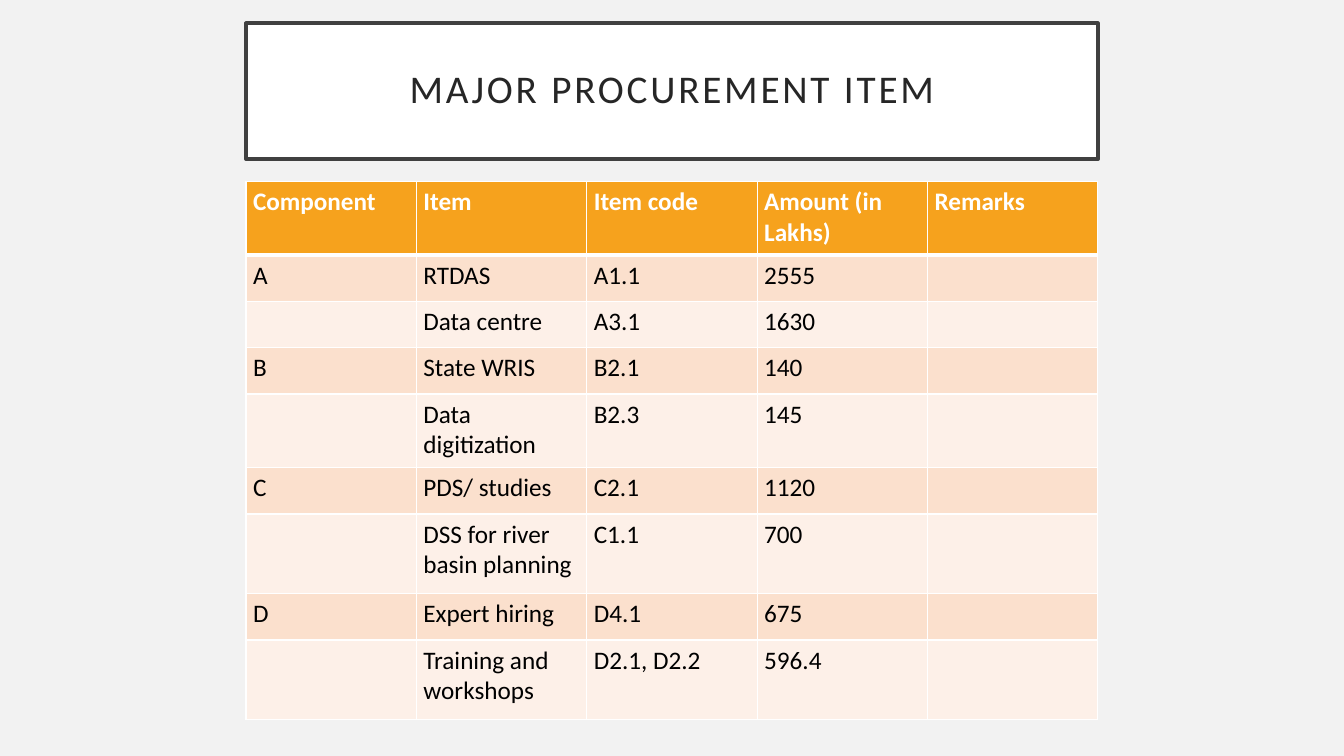
"""Build the slide that lists the major procurement items."""
from dataclasses import dataclass

from lxml import etree
from pptx import Presentation
from pptx.dml.color import RGBColor
from pptx.enum.shapes import MSO_SHAPE
from pptx.enum.text import MSO_ANCHOR, PP_ALIGN
from pptx.oxml.ns import qn
from pptx.slide import Slide
from pptx.table import _Cell
from pptx.text.text import _Paragraph
from pptx.util import Inches, Pt

RECTANGLE = MSO_SHAPE.RECTANGLE
MIDDLE = MSO_ANCHOR.MIDDLE
LEFT, CENTER = PP_ALIGN.LEFT, PP_ALIGN.CENTER

BACKGROUND = RGBColor(0xF2, 0xF2, 0xF2)
WHITE = RGBColor(0xFF, 0xFF, 0xFF)
BLACK = RGBColor(0x00, 0x00, 0x00)
FRAME = RGBColor(0x40, 0x40, 0x40)
HEADING = RGBColor(0x26, 0x26, 0x26)
ORANGE = RGBColor(0xF6, 0xA2, 0x1D)
PEACH = RGBColor(0xFB, 0xE0, 0xCD)
CREAM = RGBColor(0xFD, 0xF0, 0xE8)

FONT = "Calibri"
CONTENT_LEFT, CONTENT_WIDTH = 2.44, 8.45
TABLE_TOP = 1.8
TITLE_MARGINS = {
    "margin_left": Inches(0.2), "margin_right": Inches(0.2),
    "margin_top": Inches(0.2), "margin_bottom": Inches(0.2),
}
CELL_MARGINS = {
    "margin_left": Inches(0.07), "margin_right": Inches(0.07),
    "margin_top": Inches(0.05), "margin_bottom": Inches(0.05),
}


@dataclass(frozen=True)
class Procurement:
    """One row of the table, with its height in inches."""
    component: str
    item: str
    code: str
    amount: str
    remarks: str = ""
    height: float = 0.46

    def texts(self) -> tuple[str, ...]:
        return self.component, self.item, self.code, self.amount, self.remarks


@dataclass(frozen=True)
class RowStyle:
    """Colours, weight and rule widths shared by the cells of a row."""
    fill: RGBColor
    ink: RGBColor = BLACK
    bold: bool = False
    top: float = 1
    bottom: float = 1


HEADINGS = Procurement("Component", "Item", "Item code", "Amount (in Lakhs)", "Remarks", 0.73)
PROCUREMENTS = [
    Procurement("A", "RTDAS", "A1.1", "2555"),
    Procurement("", "Data centre", "A3.1", "1630"),
    Procurement("B", "State WRIS", "B2.1", "140"),
    Procurement("", "Data digitization", "B2.3", "145", height=0.73),
    Procurement("C", "PDS/ studies", "C2.1", "1120"),
    Procurement("", "DSS for river basin planning", "C1.1", "700", height=0.79),
    Procurement("D", "Expert hiring", "D4.1", "675"),
    Procurement("", "Training and workshops", "D2.1, D2.2", "596.4", height=0.79),
]


def apply_formats(target: object, formats: dict[str, object]) -> None:
    """Set each named attribute of the target."""
    for name, value in formats.items():
        setattr(target, name, value)


def write(paragraph: _Paragraph, text: str, size: float, ink: RGBColor, bold: bool = False) -> None:
    """Put text in a paragraph, or only its font size when there is none."""
    formats = {"name": FONT, "size": Pt(size), "bold": bold}
    if not text:
        apply_formats(paragraph.font, formats)
        return
    run = paragraph.add_run()
    run.text = text
    apply_formats(run.font, formats)
    run.font.color.rgb = ink


def draw_title(slide: Slide, text: str) -> None:
    """Draw the framed title."""
    title = slide.shapes.add_shape(
        RECTANGLE, Inches(CONTENT_LEFT), Inches(0.23), Inches(CONTENT_WIDTH), Inches(1.35))
    title.shadow.inherit = False
    title.fill.solid()
    title.fill.fore_color.rgb = WHITE
    title.line.color.rgb = FRAME
    title.line.width = Pt(2.5)
    frame = title.text_frame
    apply_formats(frame, {"word_wrap": True, "vertical_anchor": MIDDLE, **TITLE_MARGINS})
    heading = frame.paragraphs[0]
    apply_formats(heading, {"alignment": CENTER, "line_spacing": 0.9})
    write(heading, text, 28, HEADING)
    heading.runs[0].font._element.set("spc", "200")


def draw_borders(cell: _Cell, style: RowStyle) -> None:
    """Draw white rules on the four sides of a cell."""
    properties = cell._tc.get_or_add_tcPr()
    for side, points in {"lnL": 1, "lnR": 1, "lnT": style.top, "lnB": style.bottom}.items():
        rule = etree.SubElement(properties, qn(f"a:{side}"), w=str(Pt(points)))
        fill = etree.SubElement(rule, qn("a:solidFill"))
        etree.SubElement(fill, qn("a:srgbClr"), val=str(WHITE))


def draw_cell(cell: _Cell, text: str, style: RowStyle) -> None:
    """Fill one cell with its text, rules and colour."""
    apply_formats(cell, CELL_MARGINS)
    draw_borders(cell, style)
    cell.fill.solid()
    cell.fill.fore_color.rgb = style.fill
    paragraph = cell.text_frame.paragraphs[0]
    paragraph.alignment = LEFT
    write(paragraph, text, 18, style.ink, style.bold)


def row_style(index: int) -> RowStyle:
    """Choose the heading style or one of the two alternating bands."""
    if index == 0:
        return RowStyle(ORANGE, WHITE, bold=True, bottom=3)
    return RowStyle(PEACH if index % 2 else CREAM, top=3 if index == 1 else 1)


def draw_table(slide: Slide, rows: list[Procurement]) -> None:
    """Draw the procurement table with equal columns."""
    columns = len(HEADINGS.texts())
    table = slide.shapes.add_table(
        len(rows), columns, Inches(CONTENT_LEFT), Inches(TABLE_TOP),
        Inches(CONTENT_WIDTH), Inches(sum(row.height for row in rows))).table
    for column in table.columns:
        column.width = Inches(CONTENT_WIDTH / columns)
    for index, row in enumerate(rows):
        table.rows[index].height = Inches(row.height)
        for position, text in enumerate(row.texts()):
            draw_cell(table.cell(index, position), text, row_style(index))


def main() -> None:
    """Create and save the presentation."""
    presentation = Presentation()
    apply_formats(presentation, {"slide_width": Inches(13.33), "slide_height": Inches(7.5)})
    slide = presentation.slides.add_slide(presentation.slide_layouts[6])
    slide.background.fill.solid()
    slide.background.fill.fore_color.rgb = BACKGROUND
    draw_title(slide, "MAJOR PROCUREMENT ITEM")
    draw_table(slide, [HEADINGS, *PROCUREMENTS])
    presentation.save("out.pptx")


if __name__ == "__main__":
    main()
